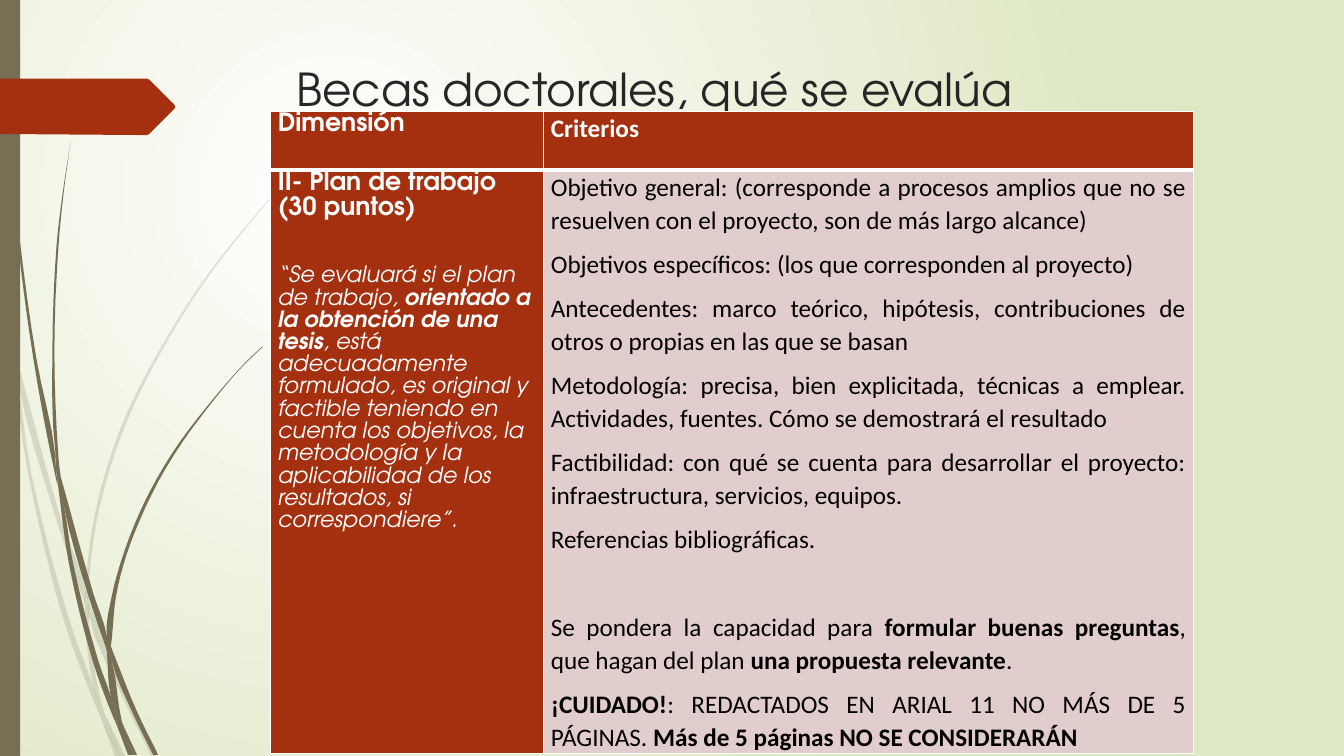
from dataclasses import dataclass

from lxml import etree
from pptx import Presentation
from pptx.dml.color import RGBColor
from pptx.enum.shapes import MSO_SHAPE
from pptx.enum.text import MSO_ANCHOR, PP_ALIGN
from pptx.oxml.ns import qn
from pptx.util import Pt

RECTANGLE = MSO_SHAPE.RECTANGLE
TOP = MSO_ANCHOR.TOP
LEFT, JUSTIFY = PP_ALIGN.LEFT, PP_ALIGN.JUSTIFY

COLORS = {
    "white": "FFFFFF", "black": "000000", "title": "262626", "meadow": "DFE8C4",
    "stem": "766F54", "rust": "A53010", "rose": "E1CDCC",
}
HEADING_FONT, BODY_FONT = "TeX Gyre Adventor", "Calibri"
FINENESS = 10  # drawing steps in one outline unit, a hundredth of an inch
STEP = Pt(0.72) / FINENESS

Outline = tuple[tuple[float, float], ...]

PALE_GRASS: list[Outline] = [
    ((11, 350), (9, 322), (0, 282), (0, 299), (10, 344)),
    ((58, 522), (84, 599), (85, 586), (62, 520), (14, 345), (17, 376)),
    ((92, 607), (88, 596), (88, 610), (123, 694), (150, 750), (155, 750), (127, 692)),
    ((119, 750), (124, 750), (105, 711)),
    ((93, 683), (70, 619), (31, 469), (17, 376), (11, 350), (28, 470), (65, 621),
     (92, 693), (101, 714), (99, 707)),
    ((84, 599), (87, 646), (93, 683), (96, 692), (105, 711), (103, 706), (91, 646),
     (88, 610), (88, 608)),
    ((88, 584), (95, 522), (110, 462), (132, 404), (160, 349), (192, 296), (229, 245),
     (268, 198), (290, 175), (312, 154), (312, 153), (289, 175), (268, 197), (228, 244),
     (191, 294), (158, 348), (129, 403), (107, 461), (92, 522), (85, 584), (85, 586),
     (88, 596)),
    ((101, 714), (114, 750), (119, 750)),
    ((88, 608), (88, 610), (88, 596), (85, 586), (84, 599)),
    ((96, 692), (93, 683), (99, 707), (101, 714), (119, 750), (105, 711)),
]
DARK_GRASS: list[Outline] = [
    ((7, 110), (17, 233), (33, 355), (56, 477), (57, 481), (55, 457), (55, 453),
     (36, 355), (19, 232), (8, 109), (5, 48), (4, 0), (3, 0), (4, 48)),
    ((88, 592), (106, 645), (106, 633), (106, 631), (93, 590), (60, 472), (64, 505)),
    ((113, 649), (110, 641), (111, 656), (132, 708), (152, 749), (157, 749), (136, 706)),
    ((110, 691), (98, 657), (72, 556), (64, 505), (57, 477), (68, 557), (93, 659),
     (111, 708), (117, 722), (116, 717)),
    ((60, 472), (58, 453), (54, 349), (58, 245), (63, 193), (70, 141), (62, 193),
     (56, 245), (52, 349), (55, 449)),
    ((133, 749), (136, 749), (122, 719)),
    ((57, 477), (64, 505), (60, 472), (55, 449), (55, 453)),
    ((111, 633), (115, 592), (125, 552), (140, 513), (158, 476), (180, 440), (205, 406),
     (231, 374), (245, 359), (261, 344), (260, 344), (245, 358), (231, 373), (204, 405),
     (178, 439), (156, 474), (137, 512), (122, 551), (111, 591), (106, 631), (110, 641)),
    ((117, 722), (127, 749), (131, 749)),
    ((106, 645), (110, 691), (116, 706), (122, 719), (121, 716), (111, 656), (109, 651)),
    ((106, 645), (109, 651), (111, 656), (110, 641), (106, 631), (106, 633)),
    ((116, 706), (110, 691), (116, 717), (117, 722), (130, 749), (133, 749), (122, 719)),
]
ARROW: Outline = (
    (173, 108), (148, 133), (146, 134), (136, 134), (0, 133), (0, 78),
    (136, 78), (146, 78), (148, 79), (173, 104), (174, 106),
)


@dataclass
class Passage:
    """A paragraph cut into pieces, of which every second one is emphasised."""
    pieces: list[str]
    size: float = 18
    before: float = 0
    italic: bool = False
    bold: bool = False


@dataclass
class CellStyle:
    font: str
    color: str
    fill: str
    align: PP_ALIGN = LEFT
    rule_below: float = 1


HEADER_LABEL = CellStyle(HEADING_FONT, "white", "rust", rule_below=3)
HEADER_CRITERIA = CellStyle(BODY_FONT, "white", "rust", rule_below=3)
DIMENSION_STYLE = CellStyle(HEADING_FONT, "white", "rust")
CRITERIA_STYLE = CellStyle(BODY_FONT, "black", "rose", JUSTIFY)

DIMENSION = [
    Passage(["II- Plan de trabajo (30 puntos)"], bold=True),
    Passage(["“Se evaluará si el plan de trabajo, ", "orientado a la obtención de una tesis",
             ", está adecuadamente formulado, es original y factible teniendo en cuenta los "
             "objetivos, la metodología y la aplicabilidad de los resultados, si "
             "correspondiere”."], size=16, before=24, italic=True),
]
CRITERIA = [
    Passage(["Objetivo general: (corresponde a procesos amplios que no se resuelven con el "
             "proyecto, son de más largo alcance)"]),
    Passage(["Objetivos específicos: (los que corresponden al proyecto)"]),
    Passage(["Antecedentes: marco teórico, hipótesis, contribuciones de otros o propias en "
             "las que se basan"]),
    Passage(["Metodología: precisa, bien explicitada, técnicas a emplear. Actividades, "
             "fuentes. Cómo se demostrará el resultado"]),
    Passage(["Factibilidad: con qué se cuenta para desarrollar el proyecto: "
             "infraestructura, servicios, equipos."]),
    Passage(["Referencias bibliográficas."]),
    Passage(["Se pondera la capacidad para ", "formular buenas preguntas",
             ", que hagan del plan ", "una propuesta relevante", "."], before=31.5),
    Passage(["", "¡CUIDADO!", ": REDACTADOS EN ARIAL 11 NO MÁS DE 5 PÁGINAS. ",
             "Más de 5 páginas NO SE CONSIDERARÁN"]),
]


def rgb(name: str) -> RGBColor:
    return RGBColor.from_string(COLORS[name])


def paint(shape, color: str) -> None:
    shape.shadow.inherit = False
    shape.fill.solid()
    shape.fill.fore_color.rgb = rgb(color)
    shape.line.fill.background()


def smooth(outline: Outline) -> Outline:
    """Bend the sides through their points and keep the sharp corners."""
    points = [complex(*point) for point in outline]
    sides = [points[(i + 1) % len(points)] - point for i, point in enumerate(points)]
    headings = [side / abs(side) for side in sides]
    curve = []
    for i, (start, side, heading) in enumerate(zip(points, sides, headings)):
        ends = []
        for neighbor in (headings[i - 1], headings[(i + 1) % len(points)]):
            gentle = (heading * neighbor.conjugate()).real > 0.85
            blend = heading + neighbor if gentle else heading
            ends.append(blend / abs(blend) * abs(side) / 3)
        first, second, end = start + ends[0], start + side - ends[1], start + side
        for t in (0, 0.25, 0.5, 0.75):
            u = 1 - t
            spot = u**3 * start + 3 * u * u * t * first + 3 * u * t * t * second + t**3 * end
            curve.append((spot.real, spot.imag))
    return tuple(curve)


def draw_outline(slide, outline: Outline, color: str, opacity: int = 100) -> None:
    steps = [(x * FINENESS, y * FINENESS) for x, y in outline]
    builder = slide.shapes.build_freeform(*steps[0], scale=STEP)
    builder.add_line_segments(steps[1:], close=True)
    shape = builder.convert_to_shape()
    paint(shape, color)
    if opacity < 100:
        tone = shape.element.spPr.find(".//" + qn("a:srgbClr"))
        etree.SubElement(tone, qn("a:alpha"), val=str(opacity * 1000))


def set_background(slide) -> None:
    """Circular gradient centred a quarter of the way in from the top left."""
    fill = slide.background.fill
    fill.gradient()
    for stop, color in zip(fill.gradient_stops, ("white", "meadow")):
        stop.color.rgb = rgb(color)
    linear = slide.element.find(".//" + qn("a:lin"))
    circle = etree.Element(qn("a:path"), path="circle")
    etree.SubElement(circle, qn("a:fillToRect"), l="50000", t="50000", r="100000", b="100000")
    linear.getparent().replace(linear, circle)


def draw_title(slide) -> None:
    title = slide.shapes.add_textbox(Pt(204.5), Pt(0), Pt(701.3), Pt(80)).text_frame
    title.word_wrap = True
    title.vertical_anchor = TOP
    title.margin_top, title.margin_bottom = Pt(48), Pt(0)
    heading = title.paragraphs[0]
    heading.text = "Becas doctorales, qué se evalúa"
    heading.font.name, heading.font.size = HEADING_FONT, Pt(32.4)
    heading.font.color.rgb = rgb("title")


def rule_cell(cell, top: float, bottom: float) -> None:
    properties = cell._tc.get_or_add_tcPr()
    for index, (edge, width) in enumerate(
            {"a:lnL": 1, "a:lnR": 1, "a:lnT": top, "a:lnB": bottom}.items()):
        line = etree.Element(qn(edge), w=str(Pt(width)))
        fill = etree.SubElement(line, qn("a:solidFill"))
        etree.SubElement(fill, qn("a:srgbClr"), val=COLORS["white"])
        properties.insert(index, line)


def fill_cell(cell, passages: list[Passage], style: CellStyle, rule_above: float) -> None:
    cell.fill.solid()
    cell.fill.fore_color.rgb = rgb(style.fill)
    rule_cell(cell, rule_above, style.rule_below)
    cell.margin_left = cell.margin_right = Pt(5.4)
    cell.margin_top = cell.margin_bottom = Pt(0)
    frame = cell.text_frame
    for index, passage in enumerate(passages):
        paragraph = frame.add_paragraph() if index else frame.paragraphs[0]
        paragraph.alignment = style.align
        paragraph.line_spacing = 1.07
        paragraph.space_before, paragraph.space_after = Pt(passage.before), Pt(8)
        font = paragraph.font
        font.name, font.size = style.font, Pt(passage.size)
        font.color.rgb = rgb(style.color)
        font.italic = passage.italic
        for position, piece in enumerate(passage.pieces):
            if piece:
                run = paragraph.add_run()
                run.text = piece
                run.font.bold = passage.bold or position % 2 == 1


def draw_criteria_table(slide) -> None:
    table = slide.shapes.add_table(2, 2, Pt(193), Pt(79.7), Pt(659.5), Pt(458.8)).table
    table.columns[0].width, table.columns[1].width = Pt(195.1), Pt(464.4)
    table.rows[0].height, table.rows[1].height = Pt(41.8), Pt(417)
    fill_cell(table.cell(0, 0), [Passage(["Dimensión"], bold=True)], HEADER_LABEL, 1)
    fill_cell(table.cell(0, 1), [Passage(["Criterios"], bold=True)], HEADER_CRITERIA, 1)
    fill_cell(table.cell(1, 0), DIMENSION, DIMENSION_STYLE, 3)
    fill_cell(table.cell(1, 1), CRITERIA, CRITERIA_STYLE, 3)


def main() -> None:
    deck = Presentation()
    deck.slide_width, deck.slide_height = Pt(960), Pt(540)
    slide = deck.slides.add_slide(deck.slide_layouts[6])
    set_background(slide)
    for grass, opacity in ((PALE_GRASS, 20), (DARK_GRASS, 100)):
        for outline in grass:
            draw_outline(slide, smooth(outline), "stem", opacity)
    paint(slide.shapes.add_shape(RECTANGLE, Pt(0), Pt(0), Pt(14.4), Pt(540)), "stem")
    draw_outline(slide, ARROW, "rust")
    draw_title(slide)
    draw_criteria_table(slide)
    deck.save("out.pptx")


if __name__ == "__main__":
    main()
